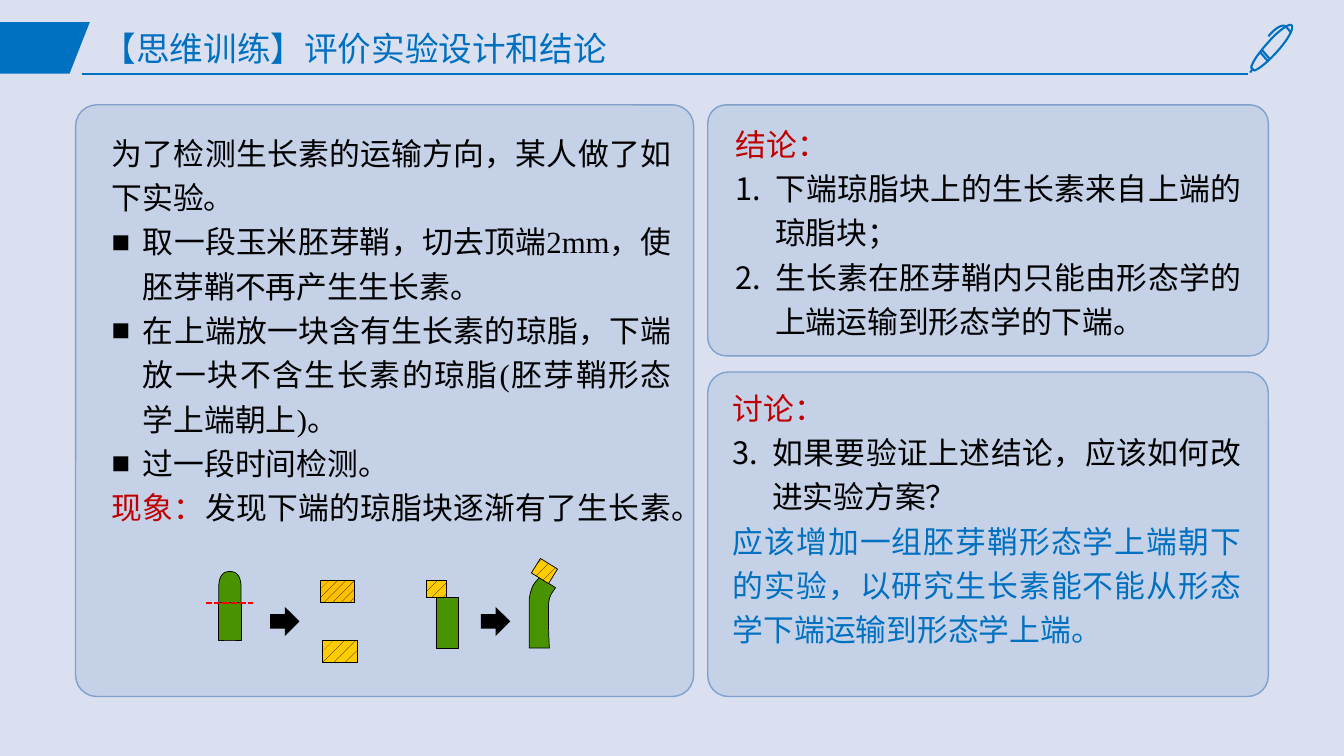
from lxml import etree
from pptx import Presentation
from pptx.dml.color import RGBColor
from pptx.enum import dml, lang, shapes, text
from pptx.oxml import ns
from pptx.util import Inches, Pt

BACK = RGBColor(0xDA, 0xE0, 0xEF)
BLUE = RGBColor(0x00, 0x70, 0xC0)
PANEL = RGBColor(0x4F, 0x81, 0xBD)
EDGE = RGBColor(0x7F, 0xA1, 0xCB)
GREEN = RGBColor(0x49, 0x92, 0x00)
AMBER = RGBColor(0xFF, 0xC0, 0x00)
YELLOW = RGBColor(0xFF, 0xCC, 0x00)
BLACK = RGBColor(0, 0, 0)
RED = RGBColor(0xFF, 0, 0)
CRIMSON = RGBColor(0xC0, 0, 0)

FONT = "Times New Roman"
KIND = shapes.MSO_SHAPE
JUSTIFY = text.PP_ALIGN.JUSTIFY
LIGHT = dml.MSO_PATTERN.PERCENT_10
DENSE = dml.MSO_PATTERN.PERCENT_20

# In an outline, a pair is a corner and six numbers are a Bezier curve.
TAB = [[(0, 0.73), (0, 0.22), (0.89, 0.22), (0.69, 0.73)]]
PEN = [
    [(12.57, 0.6), (12.5, 0.52)],
    [(12.52, 0.5), (12.59, 0.58)],
    [(12.81, 0.25), (12.79, 0.23, 12.68, 0.3, 12.57, 0.43),
     (12.48, 0.53, 12.42, 0.62, 12.41, 0.67), (12.44, 0.7),
     (12.48, 0.69, 12.57, 0.62, 12.66, 0.52),
     (12.77, 0.4, 12.84, 0.28, 12.81, 0.25)],
    [(12.42, 0.69), (12.4, 0.72)],
    [(12.8, 0.32), (12.8, 0.32, 12.78, 0.29, 12.75, 0.26),
     (12.75, 0.26, 12.7, 0.22, 12.58, 0.36)],
]
TIP = [[(2.17, 6.35), (2.39, 6.35), (2.39, 5.8),
        (2.38, 5.69, 2.33, 5.67, 2.28, 5.67),
        (2.23, 5.67, 2.18, 5.69, 2.17, 5.8)]]
BENT = [[(5.45, 6.43), (5.25, 6.43), (5.25, 5.94),
         (5.27, 5.8, 5.31, 5.78, 5.35, 5.73), (5.51, 5.83),
         (5.49, 5.87, 5.45, 5.89, 5.44, 6),
         (5.44, 6.14, 5.44, 6.28, 5.45, 6.43)]]


def paint(shape, fill=None, line=None, width=0.5, hatch=None):
    shape.shadow.inherit = False
    if fill is None:
        shape.fill.background()
    elif hatch is None:
        shape.fill.solid()
        shape.fill.fore_color.rgb = fill
    else:
        shape.fill.patterned()
        shape.fill.pattern = hatch
        shape.fill.fore_color.rgb = BLACK
        shape.fill.back_color.rgb = fill
    if line is None:
        shape.line.fill.background()
    else:
        shape.line.color.rgb = line
        shape.line.width = Pt(width)
    return shape


def draw(slide, kind, box, *style, **more):
    return paint(slide.shapes.add_shape(kind, *map(Inches, box)), *style, **more)


def trace(stroke, steps=10):
    """Turn the corners and curves of a stroke into points."""
    points = [stroke[0]]
    for part in stroke[1:]:
        if len(part) == 2:
            points.append(part)
            continue
        knots = [points[-1], part[:2], part[2:4], part[4:]]
        for i in range(1, steps + 1):
            t = i / steps
            w = ((1 - t) ** 3, 3 * t * (1 - t) ** 2, 3 * t * t * (1 - t), t ** 3)
            points.append(tuple(sum(a * k[n] for a, k in zip(w, knots))
                                for n in (0, 1)))
    return [(Inches(x), Inches(y)) for x, y in points]


def outline(slide, strokes, *style):
    pen = None
    for stroke in strokes:
        first, *rest = trace(stroke)
        if pen is None:
            pen = slide.shapes.build_freeform(*first)
        else:
            pen.move_to(*first)
        pen.add_line_segments(rest, close=len(stroke) > 3)
    paint(pen.convert_to_shape(), *style)


def rule(slide, left, right, y, color, dash=None):
    line = slide.shapes.add_connector(
        shapes.MSO_CONNECTOR.STRAIGHT, *map(Inches, (left, y, right, y)))
    line.line.color.rgb = color
    line.line.width = Pt(1.5)
    if dash:
        line.line.dash_style = dash
    etree.SubElement(line._element.spPr, ns.qn("a:effectLst"))


def panel(slide, box, bend):
    shape = draw(slide, KIND.ROUNDED_RECTANGLE, box, PANEL, EDGE, 1)
    shape.adjustments[0] = bend
    tint = shape._element.spPr.find(ns.qn("a:solidFill"))[0]
    etree.SubElement(tint, ns.qn("a:alpha"), val="15000")


def mark(para, indent, tag, font, **attrs):
    """Give a paragraph a hanging bullet or number."""
    props = para._p.get_or_add_pPr()
    props.set("marL", str(Inches(indent)))
    props.set("indent", str(-Inches(indent)))
    etree.SubElement(props, ns.qn("a:buFont"), typeface=font)
    etree.SubElement(props, ns.qn(tag), **attrs)


def square(para):
    mark(para, 0.31, "a:buChar", "Arial", char="■")


def number(start):
    return lambda para: mark(para, 0.39, "a:buAutoNum", "+mj-ea",
                             type="arabicPeriod", startAt=str(start))


def write(slide, box, paras, size=22, space=1.2, align=JUSTIFY,
          anchor=text.MSO_ANCHOR.TOP):
    """Each paragraph is a bullet function or None, then (words, colour) runs."""
    frame = slide.shapes.add_textbox(*map(Inches, box)).text_frame
    frame.word_wrap = True
    frame.vertical_anchor = anchor
    for i, (bullet, *runs) in enumerate(paras):
        para = frame.add_paragraph() if i else frame.paragraphs[0]
        para.alignment = align
        para.line_spacing = space
        if bullet:
            bullet(para)
        for words, color in runs:
            run = para.add_run()
            run.text = words
            run.font.size = Pt(size)
            run.font.name = FONT
            run.font.color.rgb = color
            run.font.language_id = lang.MSO_LANGUAGE_ID.SIMPLIFIED_CHINESE


def header(slide):
    outline(slide, TAB, BLUE)
    rule(slide, 0.81, 12.38, 0.73, BLUE)
    outline(slide, PEN, None, BLUE, 1.5)
    write(slide, (0.92, 0.21, 11.5, 0.59),
          [(None, ("【思维训练】评价实验设计和结论", BLUE))],
          24, 0.9, text.PP_ALIGN.LEFT, text.MSO_ANCHOR.MIDDLE)


def test(slide):
    """Draw the coleoptile and agar experiment."""
    outline(slide, TIP, GREEN, BLACK)
    draw(slide, KIND.RECTANGLE, (2.17, 5.98, 0.22, 0.37), GREEN, BLACK)
    rule(slide, 2.04, 2.51, 5.98, RED, dml.MSO_LINE.SQUARE_DOT)
    for left in (2.68, 4.77):
        draw(slide, KIND.RIGHT_ARROW, (left, 6.02, 0.29, 0.29), BLACK)
    draw(slide, KIND.RECTANGLE, (4.33, 5.93, 0.22, 0.5), GREEN, BLACK)
    outline(slide, BENT, GREEN, BLACK)
    for box, fill, hatch, turn in (
            ((3.18, 5.76, 0.34, 0.22), AMBER, DENSE, 0),
            ((3.2, 6.35, 0.34, 0.22), YELLOW, LIGHT, 0),
            ((4.23, 5.76, 0.2, 0.17), YELLOW, LIGHT, 0),
            ((5.3, 5.58, 0.2, 0.17), YELLOW, LIGHT, 31.8)):
        agar = draw(slide, KIND.RECTANGLE, box, fill, BLACK, hatch=hatch)
        agar.rotation = turn


def main():
    deck = Presentation()
    deck.slide_width, deck.slide_height = Inches(13.33), Inches(7.5)
    slide = deck.slides.add_slide(deck.slide_layouts[6])
    slide.background.fill.solid()
    slide.background.fill.fore_color.rgb = BACK
    header(slide)
    panel(slide, (7.02, 3.69, 5.56, 3.22), 0.064)
    panel(slide, (7.02, 1.04, 5.56, 2.49), 0.073)
    panel(slide, (0.75, 1.04, 6.13, 5.87), 0.036)
    test(slide)
    write(slide, (7.17, 3.74, 5.24, 2.74), [
        (None, ("讨论：", CRIMSON)),
        (number(3), ("如果要验证上述结论，应该如何改进实验方案？", BLACK)),
        (None, ("应该增加一组胚芽鞘形态学上端朝下的实验，"
                "以研究生长素能不能从形态学下端运输到形态学上端。", BLUE))])
    write(slide, (1.01, 1.21, 5.75, 4.07), [
        (None, ("为了检测生长素的运输方向，某人做了如下实验。", BLACK)),
        (square, ("取一段玉米胚芽鞘，切去顶端2mm，使胚芽鞘不再产生生长素。", BLACK)),
        (square, ("在上端放一块含有生长素的琼脂，下端放一块不含生长素的琼脂"
                  "(胚芽鞘形态学上端朝上)。", BLACK)),
        (square, ("过一段时间检测。", BLACK)),
        (None, ("现象：", CRIMSON), ("发现下端的琼脂块逐渐有了生长素。", BLACK))])
    write(slide, (7.2, 1.12, 5.21, 2.29), [
        (None, ("结论：", CRIMSON)),
        (number(1), ("下端琼脂块上的生长素来自上端的琼脂块；", BLACK)),
        (number(1), ("生长素在胚芽鞘内只能由形态学的上端运输到形态学的下端。", BLACK))])
    deck.save("out.pptx")


if __name__ == "__main__":
    main()
